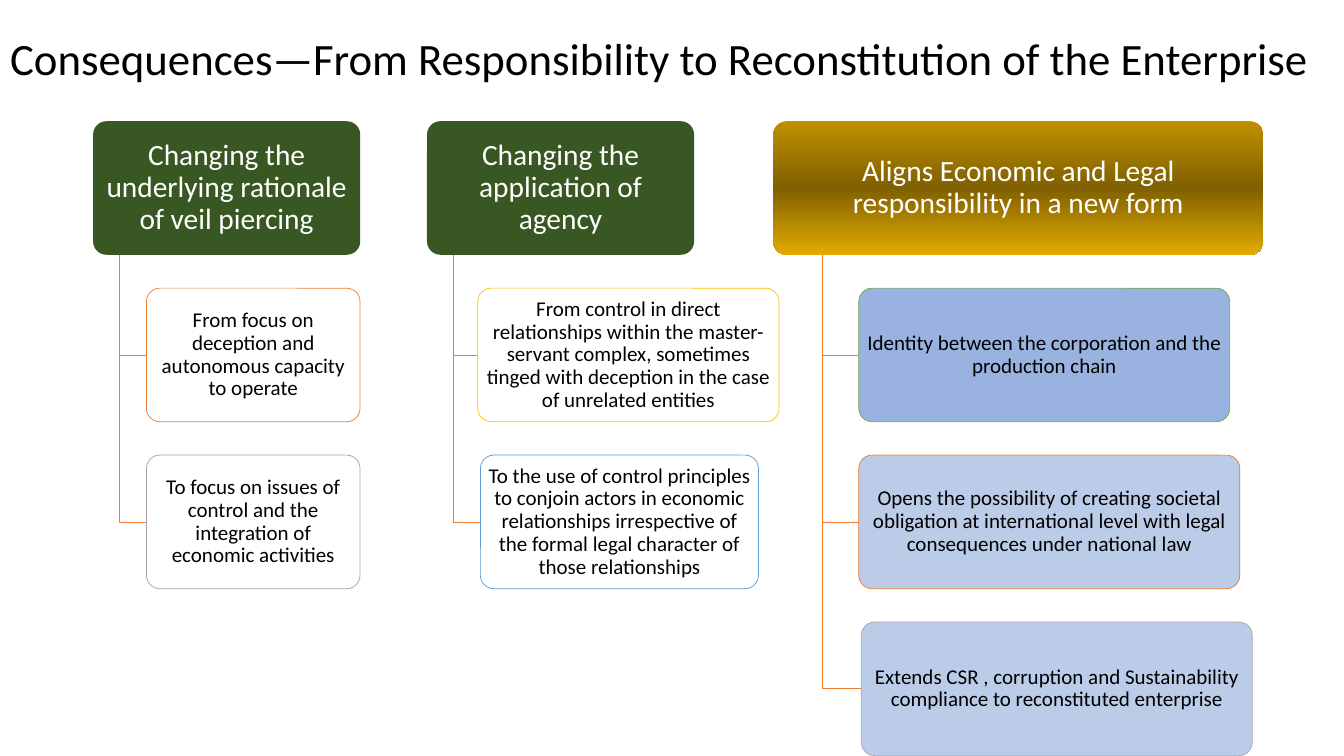
from copy import deepcopy

from lxml.etree import SubElement
from pptx import Presentation
from pptx.dml.color import RGBColor
from pptx.enum.shapes import MSO_SHAPE as Shape
from pptx.enum.text import MSO_ANCHOR as Anchor, PP_ALIGN as Align
from pptx.oxml.ns import qn
from pptx.util import Pt

FONT = "Calibri"
BLACK, WHITE, ORANGE, GRAY = "000000", "FFFFFF", "ED7D31", "A5A5A5"
GREEN, PALE_BLUE = "385723", "B4C7E7"
GOLD = ["BF9000", "806000", "E3AB00"]

SLIDE_WIDTH, SLIDE_HEIGHT = 960, 540
TOP, BOX_HEIGHT = 86.6, 95.4
ROW_PITCH = BOX_HEIGHT * 1.25
TRUNK_SHARE = 0.1  # trunk position as a share of the header width

# Columns: left, width, header fill, header text, children.
# Children: left, width, fill, outline, text.
COLUMNS = [
    (66.5, 190.8, GREEN, "Changing the underlying rationale of veil piercing", [
        (104.6, 152.6, WHITE, ORANGE,
         "From focus on deception and autonomous capacity to operate"),
        (104.6, 152.6, WHITE, GRAY,
         "To focus on issues of control and the integration of economic activities"),
    ]),
    (305, 190.8, GREEN, "Changing the application of agency", [
        (341.3, 215.2, WHITE, "FFC000",
         "From control in direct relationships within the master-servant complex, "
         "sometimes tinged with deception in the case of unrelated entities"),
        (343.2, 198.6, WHITE, "5B9BD5",
         "To the use of control principles to conjoin actors in economic relationships "
         "irrespective of the formal legal character of those relationships"),
    ]),
    (552.4, 350, GOLD, "Aligns Economic and Legal responsibility in a new form", [
        (613.4, 265, "8FAADC", "70AD47",
         "Identity between the corporation and the production chain"),
        (613.4, 272.2, PALE_BLUE, ORANGE,
         "Opens the possibility of creating societal obligation at international level "
         "with legal consequences under national law"),
        (615.3, 279.2, PALE_BLUE, GRAY,
         "Extends CSR , corruption and Sustainability compliance to reconstituted enterprise"),
    ]),
]


def color(hex_code):
    return RGBColor.from_string(hex_code)


def write_text(shape, text, size, text_color, alignment, margins=None):
    frame = shape.text_frame
    frame.text = text
    frame.word_wrap = True
    frame.vertical_anchor = Anchor.MIDDLE
    if margins:
        frame.margin_left = frame.margin_right = Pt(margins[0])
        frame.margin_top = frame.margin_bottom = Pt(margins[1])
    paragraph = frame.paragraphs[0]
    paragraph.alignment = alignment
    paragraph.line_spacing = 0.9
    font = paragraph.runs[0].font
    font.name, font.size = FONT, Pt(size)
    font.color.rgb = color(text_color)


def fill_gradient(shape, colors):
    """Fill from top to bottom with three evenly spaced colours."""
    shape.fill.gradient()
    shape.fill.gradient_angle = 270
    stop_list = next(shape.element.iter(qn("a:gsLst")))
    stop_list.insert(1, deepcopy(stop_list[0]))
    for index, (stop, stop_color) in enumerate(zip(shape.fill.gradient_stops, colors)):
        stop.position = index / 2
        stop.color.rgb = color(stop_color)


def add_box(slide, left, top, width):
    box = slide.shapes.add_shape(
        Shape.ROUNDED_RECTANGLE, Pt(left), Pt(top), Pt(width), Pt(BOX_HEIGHT))
    box.adjustments[0] = 0.1
    box.shadow.inherit = False
    return box


def add_header(slide, left, top, width, fill, text):
    header = add_box(slide, left, top, width)
    header.line.fill.background()
    if isinstance(fill, list):
        fill_gradient(header, fill)
    else:
        header.fill.solid()
        header.fill.fore_color.rgb = color(fill)
    write_text(header, text, 21, WHITE, Align.CENTER, (3, 2))


def add_child(slide, left, top, width, fill, outline, text):
    child = add_box(slide, left, top, width)
    child.fill.solid()
    child.fill.fore_color.rgb = color(fill)
    fill_element = child.element.spPr.find(qn("a:solidFill"))
    SubElement(fill_element[0], qn("a:alpha"), val="90000")
    child.line.color.rgb = color(outline)
    child.line.width = Pt(0.5)
    write_text(child, text, 15, BLACK, Align.CENTER, (2, 1.5))


def add_elbow(slide, trunk, top, right, bottom):
    builder = slide.shapes.build_freeform(Pt(trunk), Pt(top))
    builder.add_line_segments(
        [(Pt(trunk), Pt(bottom)), (Pt(right), Pt(bottom))], close=False)
    elbow = builder.convert_to_shape()
    elbow.fill.background()
    elbow.line.color.rgb = color(ORANGE)
    elbow.line.width = Pt(0.5)
    elbow.shadow.inherit = False


def add_column(slide, left, top, width, fill, text, children):
    add_header(slide, left, top, width, fill, text)
    trunk = left + width * TRUNK_SHARE
    for row, (child_left, *child) in enumerate(children, start=1):
        child_top = top + row * ROW_PITCH
        add_elbow(slide, trunk, top + BOX_HEIGHT, child_left, child_top + BOX_HEIGHT / 2)
        add_child(slide, child_left, child_top, *child)


def add_title(slide, left, top, width, height):
    title = slide.shapes.title
    title.left, title.top = Pt(left), Pt(top)
    title.width, title.height = Pt(width), Pt(height)
    write_text(title, "Consequences—From Responsibility to Reconstitution of the Enterprise",
               32, BLACK, Align.LEFT)


def main():
    presentation = Presentation()
    presentation.slide_width, presentation.slide_height = Pt(SLIDE_WIDTH), Pt(SLIDE_HEIGHT)
    slide = presentation.slides.add_slide(presentation.slide_layouts[5])
    add_title(slide, 0, 0, SLIDE_WIDTH, TOP)
    for left, *column in COLUMNS:
        add_column(slide, left, TOP, *column)
    presentation.save("out.pptx")


if __name__ == "__main__":
    main()
